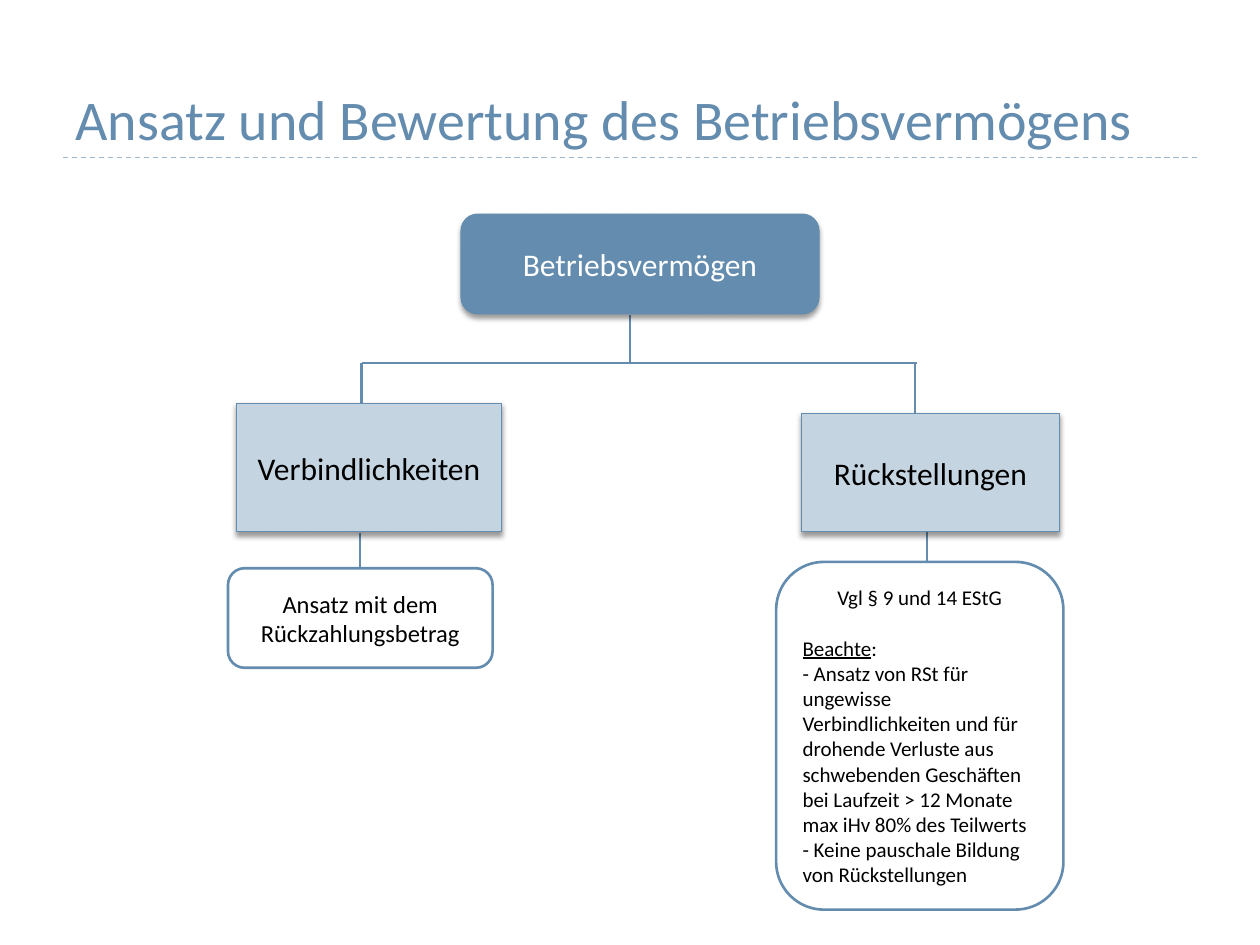
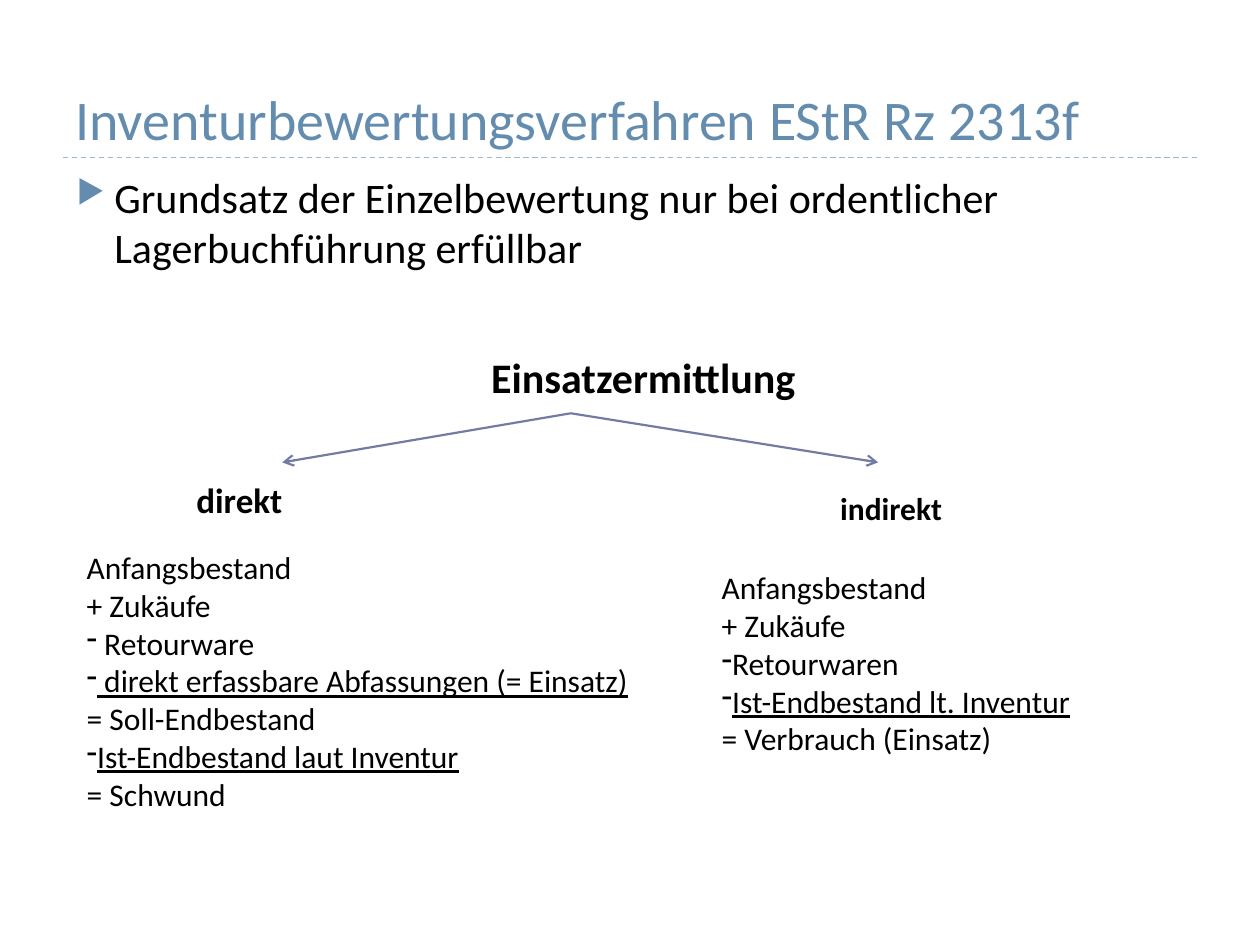
from dataclasses import dataclass

from lxml import etree
from pptx import Presentation
from pptx import util as u
from pptx.dml.color import RGBColor
from pptx.enum import dml, shapes, text
from pptx.oxml.ns import qn

CENTER = text.PP_ALIGN.CENTER
RECT = shapes.MSO_SHAPE.RECTANGLE
ROUNDED = shapes.MSO_SHAPE.ROUNDED_RECTANGLE


@dataclass(frozen=True)
class Theme:
    font: str = "Calibri"
    blue: str = "638CAE"
    pale_blue: str = "C5D4E1"
    rule: str = "9FB8CD"
    violet: str = "727CA3"
    black: str = "000000"
    white: str = "FFFFFF"
    title: int = 32
    lead: int = 24
    subhead: int = 20
    body: int = 18
    note: int = 14
    small: int = 12


THEME = Theme()


def rgb(value):
    return RGBColor.from_string(value)


def child(parent, tag, **attributes):
    """Append a drawing element with its attributes."""
    return etree.SubElement(parent, qn(tag), {k: str(v) for k, v in attributes.items()})


def write(frame, content, size=THEME.body, color=THEME.black, bold=False, align=None,
          underlined="", bullet=None, bullet_color=None, bullet_percent=100,
          hang=0, after=0):
    """Write one paragraph; `underlined` is the part at its start to underline."""
    first = frame.paragraphs[0]
    paragraph = frame.add_paragraph() if first.runs else first
    paragraph.alignment = align or text.PP_ALIGN.LEFT
    paragraph.space_after = u.Pt(after)
    for part, underline in ((underlined, True), (content[len(underlined):], False)):
        if part:
            run = paragraph.add_run()
            run.text = part
            font = run.font
            font.name, font.size, font.bold = THEME.font, u.Pt(size), bold
            font.underline = underline
            font.color.rgb = rgb(color)
    if bullet:
        properties = paragraph._p.get_or_add_pPr()
        properties.set("marL", str(u.Inches(hang)))
        properties.set("indent", str(-u.Inches(hang)))
        if bullet_color:
            child(child(properties, "a:buClr"), "a:srgbClr", val=bullet_color)
        child(properties, "a:buSzPct", val=bullet_percent * 1000)
        child(properties, "a:buChar", char=bullet)


class Deck:
    def __init__(self, theme):
        self.theme = theme
        self.presentation = Presentation()
        self.presentation.slide_width = u.Inches(10)
        self.presentation.slide_height = u.Inches(7.5)
        self.slide = None

    def new_slide(self, title):
        layout = self.presentation.slide_layouts[6]
        self.slide = self.presentation.slides.add_slide(layout)
        self.line((0.5, 1.25), (9.5, 1.25), self.theme.rule, 0.75, dashed=True)
        frame = self.text_box(0.5, 0.17, 9, 1.08, grow=False)
        frame.vertical_anchor = text.MSO_ANCHOR.BOTTOM
        write(frame, title, size=self.theme.title, color=self.theme.blue)

    def text_box(self, left, top, width, height, grow=True):
        area = map(u.Inches, (left, top, width, height))
        frame = self.slide.shapes.add_textbox(*area).text_frame
        frame.word_wrap = True
        fit = text.MSO_AUTO_SIZE
        frame.auto_size = fit.SHAPE_TO_FIT_TEXT if grow else fit.NONE
        return frame

    def box(self, kind, left, top, width, height, fill, weight=0.75, shadow=False):
        area = map(u.Inches, (left, top, width, height))
        box = self.slide.shapes.add_shape(kind, *area)
        box.fill.solid()
        box.fill.fore_color.rgb = rgb(fill)
        box.line.color.rgb = rgb(self.theme.blue)
        box.line.width = u.Pt(weight)
        box.shadow.inherit = False
        if shadow:
            effects = box._element.spPr.find(qn("a:effectLst"))
            outer = child(effects, "a:outerShdw", blurRad=u.Pt(3), dist=u.Pt(2),
                          dir=90 * 60000, rotWithShape=0)
            color = child(outer, "a:srgbClr", val=self.theme.black)
            child(color, "a:alpha", val=40000)
        box.text_frame.word_wrap = True
        box.text_frame.vertical_anchor = text.MSO_ANCHOR.MIDDLE
        return box

    def line(self, start, end, color=THEME.blue, weight=1.25, dashed=False, arrow=False):
        ends = map(u.Inches, (*start, *end))
        line = self.slide.shapes.add_connector(shapes.MSO_CONNECTOR.STRAIGHT, *ends)
        line.line.color.rgb = rgb(color)
        line.line.width = u.Pt(weight)
        if dashed:
            line.line.dash_style = dml.MSO_LINE.DASH
        if arrow:
            child(line.line._get_or_add_ln(), "a:tailEnd", type="arrow")
        child(line._element.spPr, "a:effectLst")
        return line

    def calculation(self, left, top, width, height, steps):
        """List steps as (sign, wording, is underlined)."""
        frame = self.text_box(left, top, width, height)
        for sign, wording, underline in steps:
            write(frame, wording, bullet=sign, underlined=wording if underline else "")


def business_assets(deck):
    theme = deck.theme
    deck.new_slide("Ansatz und Bewertung des Betriebsvermögens")

    # Branches from the root to both categories
    branch_y = 2.88
    for start, end in (((5, 2.5), (5, branch_y)),
                       ((5, branch_y), (2.87, branch_y)),
                       ((2.87, branch_y), (2.87, 3.28)),
                       ((5, branch_y), (7.28, branch_y)),
                       ((7.26, branch_y), (7.26, 3.28)),
                       ((7.36, 4.22), (7.36, 4.46))):
        deck.line(start, end)
    repayment_link = deck.line((2.86, 4.23), (2.86, 4.51))

    # Root and categories
    for label, kind, area, fill, color in (
            ("Betriebsvermögen", ROUNDED, (3.66, 1.7, 2.84, 0.79), theme.blue, theme.white),
            ("Verbindlichkeiten", RECT, (1.88, 3.2, 2.1, 1.02), theme.pale_blue, theme.black),
            ("Rückstellungen", RECT, (6.36, 3.28, 2.05, 0.94), theme.pale_blue, theme.black)):
        node = deck.box(kind, *area, fill, shadow=True)
        write(node.text_frame, label, color=color, align=CENTER)

    # Valuation of liabilities
    repayment = deck.box(ROUNDED, 1.81, 4.51, 2.1, 0.79, theme.white, 1.5)
    for wording in ("Ansatz mit dem", "Rückzahlungsbetrag"):
        write(repayment.text_frame, wording, size=theme.note, align=CENTER)
    repayment_link.end_connect(repayment, 0)

    # Rules for provisions
    provisions = deck.box(ROUNDED, 6.16, 4.46, 2.28, 2.76, theme.white, 1.5).text_frame
    write(provisions, "Vgl § 9 und 14 EStG", size=theme.small, align=CENTER, after=14.5)
    write(provisions, "Beachte:", size=theme.small, underlined="Beachte")
    for rule in ("- Ansatz von RSt für ungewisse Verbindlichkeiten und für drohende "
                 "Verluste aus schwebenden Geschäften bei Laufzeit > 12 Monate "
                 "max iHv 80% des Teilwerts",
                 "- Keine pauschale Bildung von Rückstellungen"):
        write(provisions, rule, size=theme.small)


def inventory_valuation(deck):
    theme = deck.theme
    deck.new_slide("Inventurbewertungsverfahren EStR Rz 2313f")

    # Principle
    principle = deck.text_box(0.51, 1.31, 9, 0.9)
    write(principle, "Grundsatz der Einzelbewertung nur bei ordentlicher "
          "Lagerbuchführung erfüllbar", size=theme.lead, bullet="▶",
          bullet_color=theme.blue, bullet_percent=76, hang=0.3)

    # Two methods
    for label, area, size in (
            ("Einsatzermittlung", (3.8, 2.74, 2.8, 0.5), theme.lead),
            ("direkt", (1.46, 3.75, 1.18, 0.44), theme.subhead),
            ("indirekt", (6.57, 3.83, 1.57, 0.4), theme.body)):
        write(deck.text_box(*area), label, size=size, bold=True)
    for method_x in (2.24, 6.97):
        deck.line((4.53, 3.28), (method_x, 3.67), theme.violet, arrow=True)

    # Calculation steps of each method
    opening = [(None, "Anfangsbestand", False), (None, "+ Zukäufe", False)]
    deck.calculation(0.59, 4.3, 4.57, 2.22, opening + [
        ("-", " Retourware", False),
        ("-", " direkt erfassbare Abfassungen (= Einsatz)", True),
        (None, "= Soll-Endbestand", False),
        ("-", "Ist-Endbestand laut Inventur", True),
        (None, "= Schwund", False)])
    deck.calculation(5.63, 4.46, 3.54, 1.62, opening + [
        ("-", "Retourwaren", False),
        ("-", "Ist-Endbestand lt. Inventur", True),
        (None, "= Verbrauch (Einsatz)", False)])


def main():
    deck = Deck(THEME)
    business_assets(deck)
    inventory_valuation(deck)
    deck.presentation.save("out.pptx")


if __name__ == "__main__":
    main()
